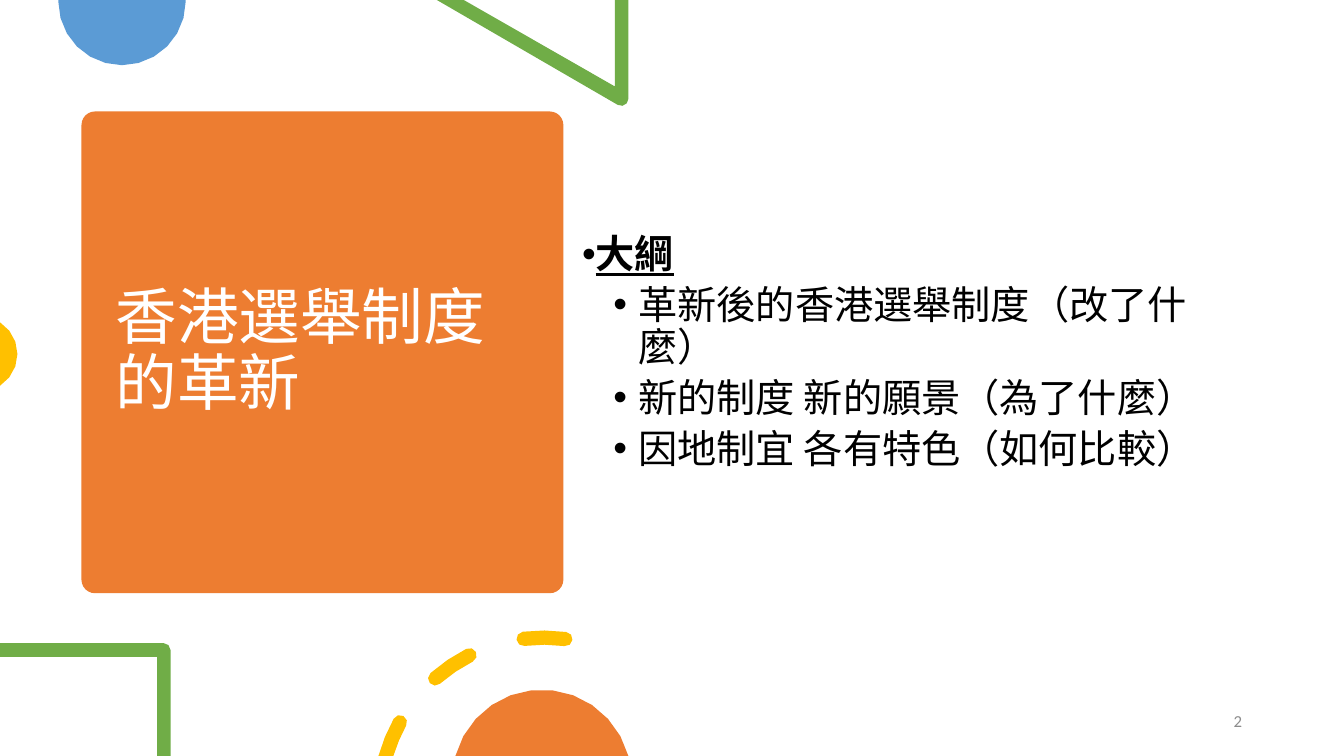
"""Build the outline slide on Hong Kong electoral reform on a 160 by 90 grid."""
from math import ceil, cos, radians, sin, sqrt

from lxml.etree import SubElement as Sub
from pptx import Presentation
from pptx.dml.color import RGBColor as Rgb
from pptx.enum.shapes import MSO_SHAPE as Kind
from pptx.enum.text import MSO_ANCHOR as Anchor, PP_ALIGN as Align
from pptx.oxml.ns import qn
from pptx.util import Inches, Pt

HUES = {"orange": "ED7D31", "blue": "5B9BD5", "green": "70AD47", "gold": "FFC000",
        "white": "FFFFFF", "black": "000000", "grey": "8C8C8C"}
CJK = "Noto Sans CJK SC"

deck = Presentation()
deck.slide_width, deck.slide_height = Inches(13.33), Inches(7.5)
unit = deck.slide_height / 90
slide = deck.slides.add_slide(deck.slide_layouts[6])
shapes = slide.shapes


def arc(x, y, r, start, end):
    """Return points on a circle, in degrees clockwise from the top."""
    steps = ceil(abs(end - start) * sqrt(r) / 45)
    turns = [radians(start + (end - start) * i / steps) for i in range(steps + 1)]
    return [(round(x + r * sin(t), 2), round(y - r * cos(t), 2)) for t in turns]


def write(box, lines, size, hue, face):
    """Add a text box on the grid, one paragraph a line, and return its frame."""
    frame = shapes.add_textbox(*[round(n * unit) for n in box]).text_frame
    frame.word_wrap = True
    frame.text = "\n".join(lines)
    for para in frame.paragraphs:
        font = para.runs[0].font
        font.size, font.name = Pt(size), face
        font.color.rgb = Rgb.from_string(HUES[hue])
        Sub(para.runs[0]._r.get_or_add_rPr(), qn("a:ea"), typeface=face)
    return frame


card = shapes.add_shape(Kind.ROUNDED_RECTANGLE, *[round(n * unit) for n in (9.7, 13.27, 57.35, 57.35)])
card.adjustments[0] = 0.028
card.shadow.inherit = False
card.fill.solid()
card.fill.fore_color.rgb = Rgb.from_string(HUES["orange"])
card.line.fill.background()

title = write((12.57, 14.6, 51.7, 54.7), ["香港選舉制度的革新"], 44, "white", CJK)
title.vertical_anchor = Anchor.MIDDLE
title.paragraphs[0].line_spacing = 0.9

hub, out, inn, cap = (64.7, 95.46), 20.4, 18.7, 0.85
mid = (out + inn) / 2
tip = arc(*hub, mid, -61, -60)[0]
dashes = [arc(*hub, out, -74.48, -61) + arc(*tip, cap, -61, 119) + arc(*hub, inn, -61, -73.02)]
for start, end in ((-41.3, -26.8), (-7, 7.6)):
    mids = arc(*hub, mid, start, end)
    dashes.append(arc(*hub, out, start, end) + arc(*mids[-1], cap, end, end + 180)
                  + arc(*hub, inn, end, start) + arc(*mids[0], cap, start + 180, start + 360))

decor = [
    ("blue", [[(6.95, 0), (22.1, 0)] + arc(14.52, 0.18, 7.58, 90, 270)]),
    ("green", [[(74.8, 0), (73.2, 0), (73.2, 10.3), (55.2, 0), (52, 0)]
               + arc(73.95, 11.75, cap, 210, 90)]),
    ("gold", [arc(-2.4, 42.15, 4.48, 32.4, 147.6)]),
    ("green", [[(0, 76.55)] + arc(19.45, 77.4, cap, 0, 90)
               + [(20.3, 90), (18.7, 90), (18.7, 78.2), (0, 78.2)]]),
    ("gold", dashes),
    ("orange", [arc(64.5, 92.75, 10.65, -75, 75)]),
]
for hue, loops in decor:
    pen = shapes.build_freeform(*[n * unit for n in loops[0][0]])
    for i, loop in enumerate(loops):
        spots = [(x * unit, y * unit) for x, y in dict.fromkeys(loop)]
        if i:
            pen.move_to(*spots[0])
        pen.add_line_segments(spots[1:], close=True)
    form = pen.convert_to_shape()
    form.shadow.inherit = False
    form.fill.solid()
    form.fill.fore_color.rgb = Rgb.from_string(HUES[hue])
    form.line.fill.background()

body = write((68.1, 27.35, 80.9, 47.6),
             ["大綱", "革新後的香港選舉制度（改了什麼）",
              "新的制度 新的願景（為了什麼）", "因地制宜 各有特色（如何比較）"],
             28, "black", CJK)
for i, para in enumerate(body.paragraphs):
    para.line_spacing, para.space_before = 0.9, Pt(6)
    props = para._p.get_or_add_pPr()
    props.set("marL", str(Inches(0.56 if i else 0)))
    props.set("indent", str(Inches(-0.25)))
    Sub(props, qn("a:buFont"), typeface="Arial")
    Sub(props, qn("a:buChar"), char="•")
lead = body.paragraphs[0].runs[0].font
lead.bold = lead.underline = True

page = write((137.8, 83.4, 11.2, 4.8), ["2"], 12, "grey", "Calibri")
page.vertical_anchor = Anchor.MIDDLE
page.paragraphs[0].alignment = Align.RIGHT
page.paragraphs[0].space_after = Pt(6)

deck.save("out.pptx")
